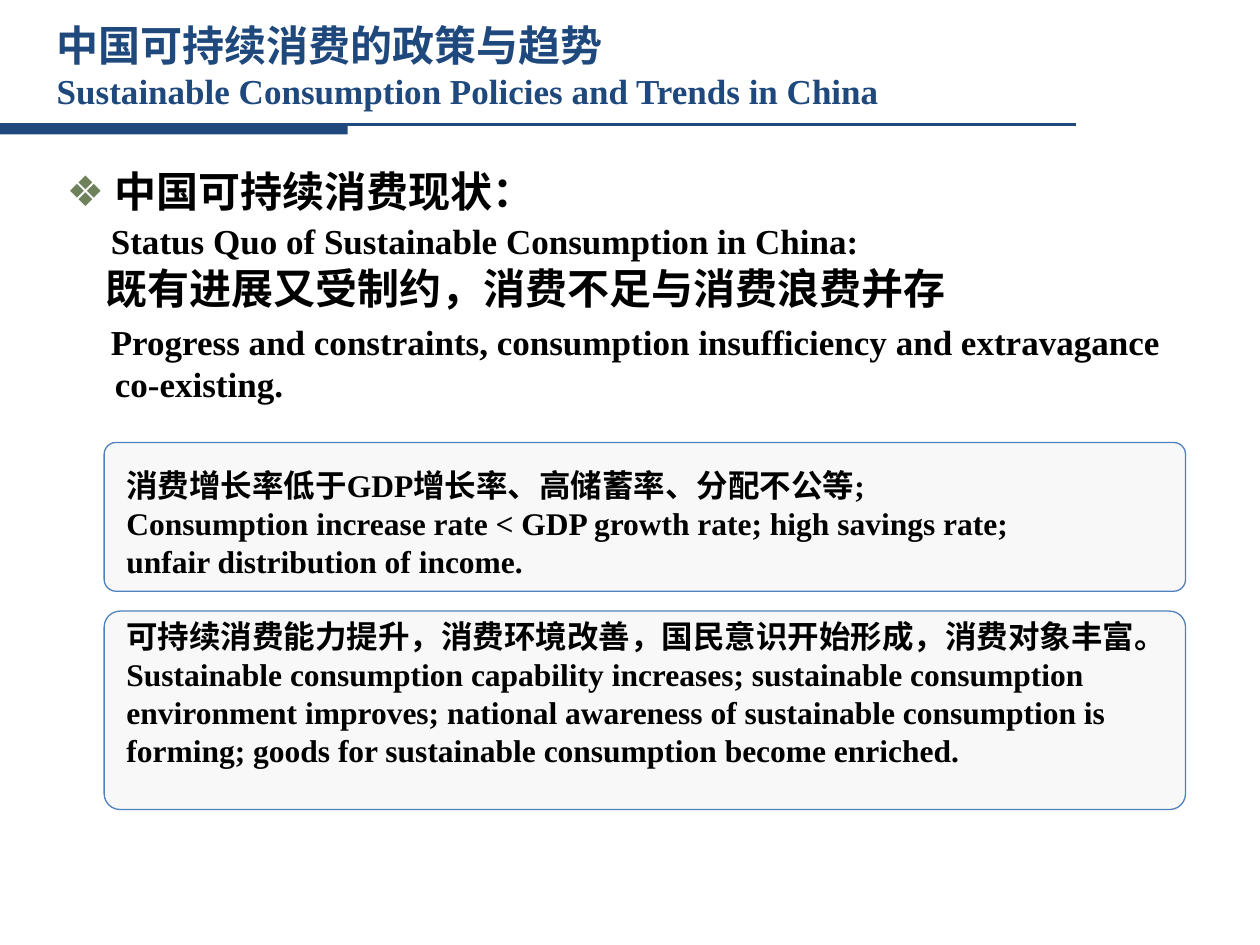
from dataclasses import dataclass

from lxml.etree import SubElement
from pptx import Presentation
from pptx.dml.color import RGBColor
from pptx.enum.shapes import MSO_CONNECTOR, MSO_SHAPE
from pptx.enum.text import MSO_ANCHOR, MSO_AUTO_SIZE, PP_ALIGN
from pptx.oxml.ns import qn
from pptx.util import Cm, Pt

HAN = "Noto Sans CJK SC"
ROMAN = "Times New Roman"
NAVY = "1F497D"
BLACK = "000000"


@dataclass
class Line:
    text: str
    size: int
    font: str = ROMAN
    color: str = BLACK


@dataclass
class Item:
    line: Line
    first: float
    space: float
    ratio: float = 0.9
    mark: str = ""


@dataclass
class Card:
    top: float
    height: float
    text_top: float
    text_width: float
    lines: list[Line]


TITLE = [
    Line("中国可持续消费的政策与趋势", 24, HAN, NAVY),
    Line("Sustainable Consumption Policies and Trends in China", 20, color=NAVY),
]
ITEMS = [
    Item(Line("中国可持续消费现状：", 24, HAN), -0.97, 0, mark="❖"),
    Item(Line("Status Quo of Sustainable Consumption in China:", 20), -0.08, 4),
    Item(Line("既有进展又受制约，消费不足与消费浪费并存", 24, HAN), -0.18, 4),
    Item(Line("Progress and constraints, consumption insufficiency and "
              "extravagance\vco-existing.", 20), -0.08, 4, 1.0),
]
CARDS = [
    Card(8.92, 3.0, 9.27, 18.6, [
        Line("消费增长率低于GDP增长率、高储蓄率、分配不公等;", 18),
        Line("Consumption increase rate < GDP growth rate; high savings rate; "
             "unfair distribution of income.", 18),
    ]),
    Card(12.32, 4.0, 12.32, 21.6, [
        Line("可持续消费能力提升，消费环境改善，国民意识开始形成，消费对象丰富。", 18, HAN),
        Line("Sustainable consumption capability increases; sustainable "
             "consumption environment improves; national awareness of "
             "sustainable consumption is forming; goods for sustainable "
             "consumption become enriched.", 18),
    ]),
]


def tint(code: str) -> RGBColor:
    return RGBColor.from_string(code)


def place(shape, left: float, top: float, width: float, height: float) -> None:
    shape.left, shape.top = Cm(left), Cm(top)
    shape.width, shape.height = Cm(width), Cm(height)


def style(para, line: Line) -> None:
    para.text = line.text
    para.alignment = PP_ALIGN.LEFT
    font = para.font
    font.name, font.size, font.bold = line.font, Pt(line.size), True
    font.color.rgb = tint(line.color)
    # East Asian typeface
    props = para._p.pPr.find(qn("a:defRPr"))
    SubElement(props, qn("a:ea")).set("typeface", HAN)


def write(frame, lines: list[Line]) -> None:
    frame.word_wrap = True
    frame.auto_size = MSO_AUTO_SIZE.NONE
    for i, line in enumerate(lines):
        para = frame.add_paragraph() if i else frame.paragraphs[0]
        style(para, line)


def bullet(para, item: Item) -> None:
    props = para._p.get_or_add_pPr()
    props.set("marL", str(Cm(0.97)))
    props.set("indent", str(Cm(item.first)))
    if item.mark:
        hue = SubElement(props, qn("a:buClr"))
        SubElement(hue, qn("a:srgbClr")).set("val", "6E815B")
        SubElement(props, qn("a:buChar")).set("char", item.mark)
    else:
        SubElement(props, qn("a:buNone"))


def fill_list(frame, items: list[Item]) -> None:
    frame.word_wrap = True
    frame.auto_size = MSO_AUTO_SIZE.NONE
    for i, item in enumerate(items):
        para = frame.add_paragraph() if i else frame.paragraphs[0]
        bullet(para, item)
        para.line_spacing = item.ratio
        para.space_before = Pt(item.space)
        style(para, item.line)


def draw_rule(slide) -> None:
    rule = slide.shapes.add_connector(
        MSO_CONNECTOR.STRAIGHT, 0, Cm(2.51), Cm(21.69), Cm(2.51))
    rule.line.color.rgb = tint(NAVY)
    rule.line.width = Pt(1.5)
    SubElement(rule._element.spPr, qn("a:effectLst"))
    bar = slide.shapes.add_shape(
        MSO_SHAPE.RECTANGLE, 0, Cm(2.51), Cm(7.01), Cm(0.2))
    bar.shadow.inherit = False
    bar.fill.solid()
    bar.fill.fore_color.rgb = tint(NAVY)
    bar.line.fill.background()


def draw_card(slide, card: Card) -> None:
    panel = slide.shapes.add_shape(
        MSO_SHAPE.ROUNDED_RECTANGLE,
        Cm(2.1), Cm(card.top), Cm(21.8), Cm(card.height))
    panel.adjustments[0] = 0.08
    panel.shadow.inherit = False
    panel.fill.solid()
    panel.fill.fore_color.rgb = tint("F8F8F8")
    panel.line.color.rgb = tint("4F81BD")
    panel.line.width = Pt(0.75)
    box = slide.shapes.add_textbox(
        Cm(2.3), Cm(card.text_top), Cm(card.text_width), Cm(card.height))
    write(box.text_frame, card.lines)


def main() -> None:
    deck = Presentation()
    deck.slide_width, deck.slide_height = Cm(25.4), Cm(19.05)
    slide = deck.slides.add_slide(deck.slide_layouts[1])

    # Heading and its rule
    title = slide.shapes.title
    place(title, 0.89, 0.53, 21.8, 1.57)
    title.text_frame.vertical_anchor = MSO_ANCHOR.MIDDLE
    write(title.text_frame, TITLE)
    draw_rule(slide)

    # Status list
    body = slide.placeholders[1]
    place(body, 1.09, 3.33, 23.8, 5.59)
    fill_list(body.text_frame, ITEMS)

    # Finding cards
    for card in CARDS:
        draw_card(slide, card)

    deck.save("out.pptx")


if __name__ == "__main__":
    main()
